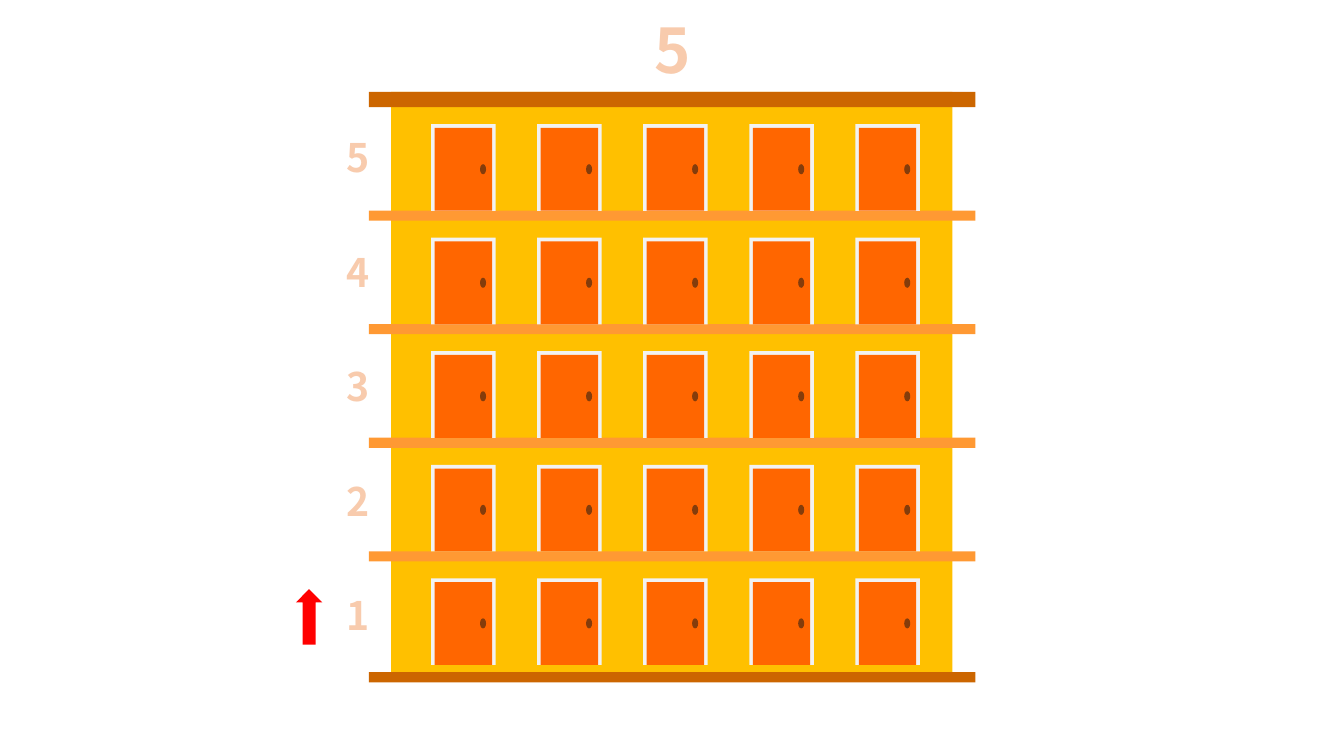
import pptx
import pptx.util
import pptx.dml.color
import pptx.enum.shapes
import pptx.enum.text
import pptx.oxml

Pt = pptx.util.Pt
SHAPES = pptx.enum.shapes.MSO_SHAPE
COLOURS = {
    "wall": "FFC000", "roof": "CC6600", "ledge": "FF9933",
    "frame": "F2F2F2", "door": "FF6600", "knob": "843C0B",
    "number": "F8CBAD", "outline": "ED7D31", "arrow": "FF0000",
}
FLOORS = 5
DOORS_PER_FLOOR = 5
FLOOR_STEP = 81.1
DOOR_STEP = 75.75

deck = pptx.Presentation()
deck.slide_width = Pt(960)
deck.slide_height = Pt(540)
page = deck.slides.add_slide(deck.slide_layouts[5])


def add_block(parent, kind, colour, left, top, width, height):
    block = parent.add_shape(kind, Pt(left), Pt(top), Pt(width), Pt(height))
    block.shadow.inherit = False
    block.fill.solid()
    block.fill.fore_color.rgb = pptx.dml.color.RGBColor.from_string(COLOURS[colour])
    block.line.fill.background()
    return block


def write_number(box, text, *, size, left, top, width, height):
    box.left, box.top, box.width, box.height = Pt(left), Pt(top), Pt(width), Pt(height)
    frame = box.text_frame
    frame.word_wrap = False
    frame.auto_size = pptx.enum.text.MSO_AUTO_SIZE.NONE
    frame.vertical_anchor = pptx.enum.text.MSO_ANCHOR.TOP
    para = frame.paragraphs[0]
    para.alignment = pptx.enum.text.PP_ALIGN.CENTER
    span = para.add_run()
    span.text = text
    span.font.name = "Noto Sans CJK SC"
    span.font.size = Pt(size)
    span.font.bold = True
    span.font.color.rgb = pptx.dml.color.RGBColor.from_string(COLOURS["number"])
    # Outline of the digits
    span.font._element.insert(0, pptx.oxml.parse_xml(
        '<a:ln xmlns:a="http://schemas.openxmlformats.org/drawingml/2006/main" w="22225">'
        f'<a:solidFill><a:srgbClr val="{COLOURS["outline"]}"/></a:solidFill></a:ln>'))


# Wall, roof, ledges and ground
building = page.shapes.add_group_shape().shapes
add_block(building, SHAPES.RECTANGLE, "wall", 279.4, 65.6, 401, 414.8)
add_block(building, SHAPES.RECTANGLE, "roof", 263.5, 65.6, 433.2, 11)
for level in range(FLOORS - 1):
    add_block(building, SHAPES.RECTANGLE, "ledge",
              263.5, 150.5 + level * FLOOR_STEP, 433.2, 7.2)
add_block(building, SHAPES.RECTANGLE, "roof", 263.5, 480.2, 433.2, 7.2)

# Doors
for level in range(FLOORS):
    for column in range(DOORS_PER_FLOOR):
        left = 308 + column * DOOR_STEP
        top = 88.7 + level * FLOOR_STEP
        add_block(building, SHAPES.RECTANGLE, "frame", left, top, 46.1, 61.9)
        add_block(building, SHAPES.RECTANGLE, "door", left + 2.5, top + 2.7, 41, 59.2)
        add_block(building, SHAPES.OVAL, "knob", left + 34.9, top + 28.6, 4.3, 7.2)

# Number of doors above, floor numbers at the side
write_number(page.shapes.title, "5", size=44, left=460.1, top=5, width=38.9, height=60.5)
for floor in range(1, FLOORS + 1):
    write_number(page.shapes.add_textbox(0, 0, 0, 0), str(floor), size=28,
                 left=241, top=419 - (floor - 1) * 81.75, width=30.2, height=41)

# Upward arrow
arrow = add_block(page.shapes, SHAPES.RIGHT_ARROW, "arrow", 201, 431.2, 39.6, 18.8)
arrow.rotation = 270

deck.save("out.pptx")
